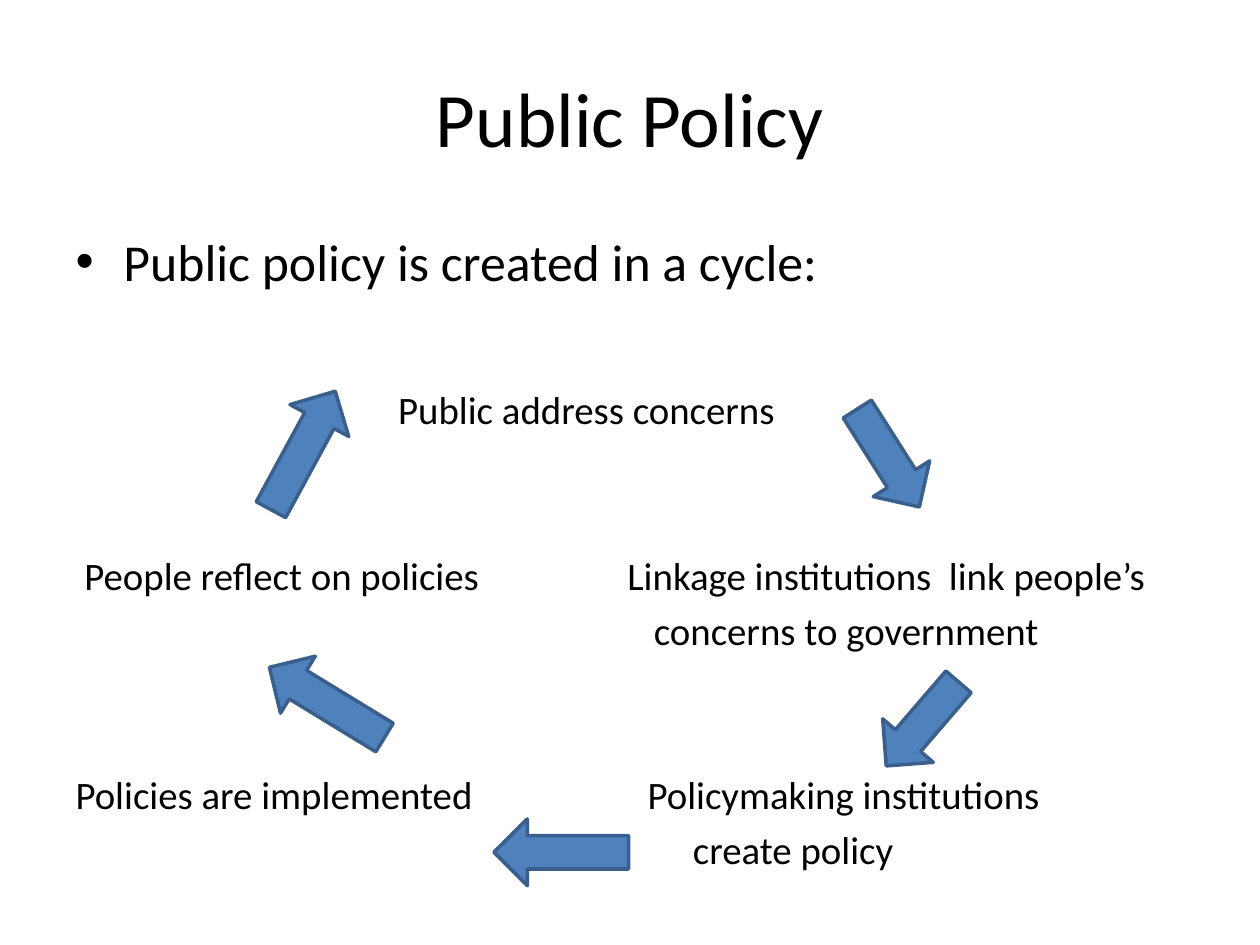
from dataclasses import dataclass

from lxml.etree import SubElement
from pptx import Presentation
from pptx.dml.color import RGBColor
from pptx.enum.shapes import MSO_SHAPE
from pptx.enum.text import MSO_ANCHOR, PP_ALIGN
from pptx.oxml.ns import qn
from pptx.slide import Slide
from pptx.text.text import TextFrame
from pptx.util import Inches, Pt

BLACK = RGBColor(0x00, 0x00, 0x00)
BLUE = RGBColor(0x4F, 0x81, 0xBD)
DARK_BLUE = RGBColor(0x3A, 0x5F, 0x8C)

SLIDE_WIDTH, SLIDE_HEIGHT = Inches(10), Inches(7.5)
COLUMNS, ROWS = 100, 75
ARROW_ROWS = 5.3
STEP_SIZE = 22.2
FRAME_FORMAT = {
    "word_wrap": True,
    "margin_left": 0,
    "margin_right": 0,
    "margin_top": 0,
    "margin_bottom": 0,
}


@dataclass(frozen=True)
class Area:
    column: float
    row: float
    columns: float
    rows: float

    def box(self) -> tuple[int, int, int, int]:
        return (
            round(self.column * SLIDE_WIDTH / COLUMNS),
            round(self.row * SLIDE_HEIGHT / ROWS),
            round(self.columns * SLIDE_WIDTH / COLUMNS),
            round(self.rows * SLIDE_HEIGHT / ROWS),
        )


@dataclass(frozen=True)
class Step:
    column: float
    row: float
    lines: tuple[str, ...]
    second_line_indent: float = 0


@dataclass(frozen=True)
class Arrow:
    column: float
    row: float
    columns: float
    direction: MSO_SHAPE
    rotation: float = 0


STEPS = (
    Step(31.6, 30.6, ("Public address concerns",)),
    Step(6.7, 43.8, ("People reflect on policies",)),
    Step(49.8, 43.8, ("Linkage institutions  link people’s", "concerns to government"), 2.1),
    Step(6, 61.2, ("Policies are implemented",)),
    Step(51.4, 61.2, ("Policymaking institutions", "create policy"), 3.6),
)

ARROWS = (
    Arrow(65.9, 33.7, 9.2, MSO_SHAPE.RIGHT_ARROW, 57.6),
    Arrow(68.8, 54.8, 8.8, MSO_SHAPE.RIGHT_ARROW, 130.7),
    Arrow(39.2, 65, 10.7, MSO_SHAPE.LEFT_ARROW),
    Arrow(20.6, 53.1, 10.7, MSO_SHAPE.LEFT_ARROW, 31.4),
    Arrow(18.7, 33.1, 10.7, MSO_SHAPE.LEFT_ARROW, 118.5),
)


def add_text(slide: Slide, area: Area, lines: tuple[str, ...], size: float) -> TextFrame:
    frame = slide.shapes.add_textbox(*area.box()).text_frame
    for name, value in FRAME_FORMAT.items():
        setattr(frame, name, value)
    font_format = {"name": "Calibri", "size": Pt(size)}
    for index, line in enumerate(lines):
        paragraph = frame.add_paragraph() if index else frame.paragraphs[0]
        paragraph.space_before = Pt(0.2 * size) if index else Pt(0)
        run = paragraph.add_run()
        run.text = line
        for name, value in font_format.items():
            setattr(run.font, name, value)
        run.font.color.rgb = BLACK
    return frame


def add_title(slide: Slide) -> None:
    frame = add_text(slide, Area(5, 3, 90, 12.5), ("Public Policy",), 44)
    frame.vertical_anchor = MSO_ANCHOR.MIDDLE
    frame.paragraphs[0].alignment = PP_ALIGN.CENTER


def add_statement(slide: Slide) -> None:
    statement = ("Public policy is created in a cycle:",)
    frame = add_text(slide, Area(6, 18.2, 88, 5), statement, 29.6)
    properties = frame.paragraphs[0]._p.get_or_add_pPr()
    indent = Inches(0.38)
    properties.set("marL", str(indent))
    properties.set("indent", str(-indent))
    SubElement(properties, qn("a:buFont")).set("typeface", "Arial")
    SubElement(properties, qn("a:buChar")).set("char", "•")


def add_step(slide: Slide, step: Step) -> None:
    area = Area(step.column, step.row, 43, 4.4 * len(step.lines))
    frame = add_text(slide, area, step.lines, STEP_SIZE)
    for paragraph in frame.paragraphs[1:]:
        indent = round(step.second_line_indent * SLIDE_WIDTH / COLUMNS)
        paragraph._p.get_or_add_pPr().set("marL", str(indent))


def add_arrow(slide: Slide, arrow: Arrow) -> None:
    area = Area(arrow.column, arrow.row, arrow.columns, ARROW_ROWS)
    shape = slide.shapes.add_shape(arrow.direction, *area.box())
    shape.rotation = arrow.rotation
    shape.shadow.inherit = False
    shape.fill.solid()
    shape.fill.fore_color.rgb = BLUE
    shape.line.color.rgb = DARK_BLUE
    shape.line.width = Pt(2)


def main() -> None:
    presentation = Presentation()
    presentation.slide_width = SLIDE_WIDTH
    presentation.slide_height = SLIDE_HEIGHT
    slide = presentation.slides.add_slide(presentation.slide_layouts[6])
    add_title(slide)
    add_statement(slide)
    for step in STEPS:
        add_step(slide, step)
    for arrow in ARROWS:
        add_arrow(slide, arrow)
    presentation.save("out.pptx")


if __name__ == "__main__":
    main()
